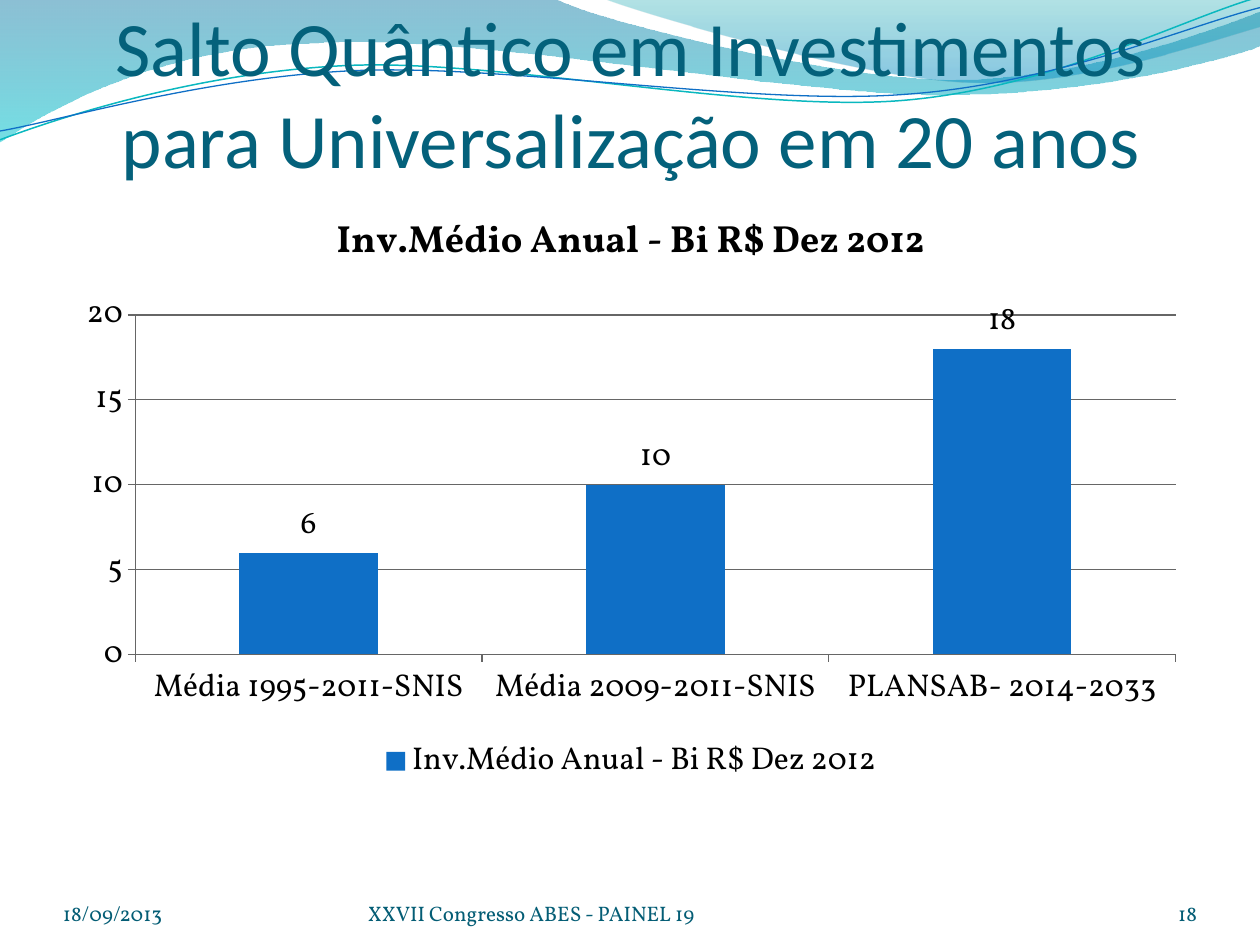
from math import cos, radians, sin

from lxml.etree import SubElement
from pptx import Presentation
from pptx.chart.data import CategoryChartData
from pptx.dml.color import RGBColor
from pptx.enum.chart import XL_CHART_TYPE as CHART, XL_LABEL_POSITION as LABEL
from pptx.enum.chart import XL_LEGEND_POSITION as LEGEND, XL_TICK_MARK as TICK
from pptx.enum.text import MSO_ANCHOR as ANCHOR, PP_ALIGN as ALIGN
from pptx.oxml.ns import qn
from pptx.util import Inches, Pt

COLORS = {
    "title": "04617B", "footer": "045D75", "text": "000000", "bar": "0F6FC6",
    "axis": "666666", "teal_line": "0AB8BF", "blue_line": "0F6FC6",
    "deep": "0074A1", "aqua": "00C6CF", "sea": "00A1A9", "sky": "008BBF",
}
STROKE_TILT = 357.3

# Each outline is a start point, then line ends (2 numbers) or Bezier curves (6).
BANDS = [
    ((-0.01, -0.01, 10.02, 1.14),
     [(0, 0), (4.4, -0.01), (4.76, 0.17, 6.64, 0.63, 7.58, 0.63),
      (8.53, 0.63, 9.58, 0.26, 10, 0.09), (10.01, 0.36),
      (9.83, 0.44, 8.7, 0.76, 7.46, 0.75), (6.22, 0.75, 3.82, 0.28, 2.57, 0.34),
      (1.29, 0.36, 0.46, 0.83, -0.01, 1.13), (0, 0)],
     [(0, "deep", 45), (1, "aqua", 55)]),
    ((4.79, -0.01, 5.21, 0.7),
     [(4.79, -0.01), (5.09, 0.11, 6.82, 0.62, 7.69, 0.65),
      (8.56, 0.69, 9.61, 0.32, 10, 0.21), (10, 0), (4.79, -0.01)],
     [(0, "sea", 30), (0.8, "sky", 45)]),
]
STROKES = [
    ((-0.02, 0.22, 10.02, 0.71),
     [(0, 1.11), (0.48, 0.93, 1.58, 0.57, 2.77, 0.52),
      (3.95, 0.47, 5.93, 0.89, 7.13, 0.8), (8.33, 0.71, 9.38, 0.15, 9.98, -0.02)],
     "teal_line", 0.85),
    ((-0.02, 0.3, 10.03, 0.58),
     [(0, 1.04), (0.47, 0.96, 1.64, 0.61, 2.83, 0.56),
      (4.03, 0.51, 5.97, 0.84, 7.17, 0.75), (8.36, 0.67, 9.41, 0.21, 10, 0.06)],
     "blue_line", 0.75),
]


def rgb(name):
    return RGBColor.from_string(COLORS[name])


def style_font(font, **values):
    font.color.rgb = rgb(values.pop("color"))
    for name, value in values.items():
        setattr(font, name, value)


def add_curve(shapes, box, outline, tilt=0, close=False):
    """Add a freeform filling the box and give it true Bezier segments."""
    left, top, width, height = box
    right, bottom = left + width, top + height
    builder = shapes.build_freeform(Inches(left), Inches(top), scale=1.0)
    builder.add_line_segments([(Inches(x), Inches(y)) for x, y in
                               ((right, top), (right, bottom), (left, bottom))])
    sp = builder.convert_to_shape()
    sp.shadow.inherit = False
    sp.rotation = tilt

    turn = radians(-tilt)
    path = next(sp._element.iter(qn("a:path")))
    for child in list(path):
        path.remove(child)
    for i, numbers in enumerate(outline):
        tag = "a:moveTo" if i == 0 else "a:lnTo" if len(numbers) == 2 else "a:cubicBezTo"
        segment = SubElement(path, qn(tag))
        for x, y in zip(numbers[::2], numbers[1::2]):
            dx, dy = x - left - width / 2, y - top - height / 2
            local_x = width / 2 + dx * cos(turn) - dy * sin(turn)
            local_y = height / 2 + dx * sin(turn) + dy * cos(turn)
            SubElement(segment, qn("a:pt"), x=str(int(Inches(local_x))),
                       y=str(int(Inches(local_y))))
    if close:
        SubElement(path, qn("a:close"))
    return sp


def add_waves(slide, left, top):
    def placed(box):
        return (left + box[0], top + box[1], *box[2:])

    def moved(outline):
        return [tuple(v + (left, top)[i % 2] for i, v in enumerate(numbers))
                for numbers in outline]

    for box, outline, stops in BANDS:
        sp = add_curve(slide.shapes, placed(box), moved(outline), close=True)
        sp.line.fill.background()
        sp.fill.gradient()
        sp.fill.gradient_angle = 270
        for stop, (position, color, _) in zip(sp.fill.gradient_stops, stops):
            stop.position = position
            stop.color.rgb = rgb(color)
        tints = list(sp._element.spPr.iter(qn("a:srgbClr")))
        for tint, (_, _, opacity) in zip(tints, stops):
            SubElement(tint, qn("a:alpha"), val=str(opacity * 1000))
    group = slide.shapes.add_group_shape()
    for box, outline, color, width in STROKES:
        sp = add_curve(group.shapes, placed(box), moved(outline), STROKE_TILT)
        sp.fill.background()
        sp.line.color.rgb = rgb(color)
        sp.line.width = Pt(width)


def add_text(slide, box, text, align=ALIGN.LEFT, inset_top=0, **font):
    tf = slide.shapes.add_textbox(*map(Inches, box)).text_frame
    settings = {"word_wrap": True, "vertical_anchor": ANCHOR.BOTTOM,
                "margin_left": 0, "margin_right": 0,
                "margin_top": Inches(inset_top), "margin_bottom": 0}
    for name, value in settings.items():
        setattr(tf, name, value)
    p = tf.paragraphs[0]
    p.alignment = align
    r = p.add_run()
    r.text = text
    style_font(r.font, **font)


def add_title(slide, box):
    add_text(slide, box, "Salto Quântico em Investimentos para Universalização em 20 anos",
             ALIGN.CENTER, 0.05, name="Calibri", size=Pt(44), color="title")


def add_investment_chart(slide, box):
    name = "Inv.Médio Anual - Bi R$ Dez 2012"
    data = CategoryChartData()
    data.categories = ["Média 1995-2011-SNIS", "Média 2009-2011-SNIS", "PLANSAB- 2014-2033"]
    data.add_series(name, (6, 10, 18))
    chart = slide.shapes.add_chart(
        CHART.COLUMN_CLUSTERED, *map(Inches, box), data).chart
    style_font(chart.font, name="Vollkorn", size=Pt(18), color="text")

    chart.has_title = True
    tf = chart.chart_title.text_frame
    tf.text = name
    style_font(tf.paragraphs[0].runs[0].font, name="Vollkorn", size=Pt(21.6),
               bold=True, color="text")
    chart.has_legend = True
    chart.legend.position = LEGEND.BOTTOM
    chart.legend.include_in_layout = False

    values = chart.value_axis
    values.has_major_gridlines = True
    for axis in (chart.category_axis, values):
        axis.major_tick_mark = TICK.OUTSIDE
    for part in (chart.category_axis, values, values.major_gridlines):
        part.format.line.color.rgb = rgb("axis")

    plot = chart.plots[0]
    plot.vary_by_categories = False
    plot.gap_width = 150
    fill = plot.series[0].format.fill
    fill.solid()
    fill.fore_color.rgb = rgb("bar")
    plot.has_data_labels = True
    plot.data_labels.show_value = True
    plot.data_labels.position = LABEL.OUTSIDE_END


def add_footer(slide, left, top, height):
    parts = [(8.17, 0.83, "18", ALIGN.RIGHT),
             (0, 2.33, "18/09/2013", ALIGN.LEFT),
             (2.42, 3.67, "XXVII Congresso ABES - PAINEL 19", ALIGN.LEFT)]
    for offset, width, text, align in parts:
        add_text(slide, (left + offset, top, width, height), text, align,
                 name="Vollkorn", size=Pt(12), color="footer")


def main():
    prs = Presentation()
    prs.slide_width, prs.slide_height = Inches(10), Inches(7.5)
    slide = prs.slides.add_slide(prs.slide_layouts[6])
    add_waves(slide, 0, 0)
    add_title(slide, (0.51, 0.21, 9, 1.25))
    add_investment_chart(slide, (0.51, 1.47, 9, 4.8))
    add_footer(slide, 0.5, 6.95, 0.4)
    prs.save("out.pptx")


if __name__ == "__main__":
    main()
